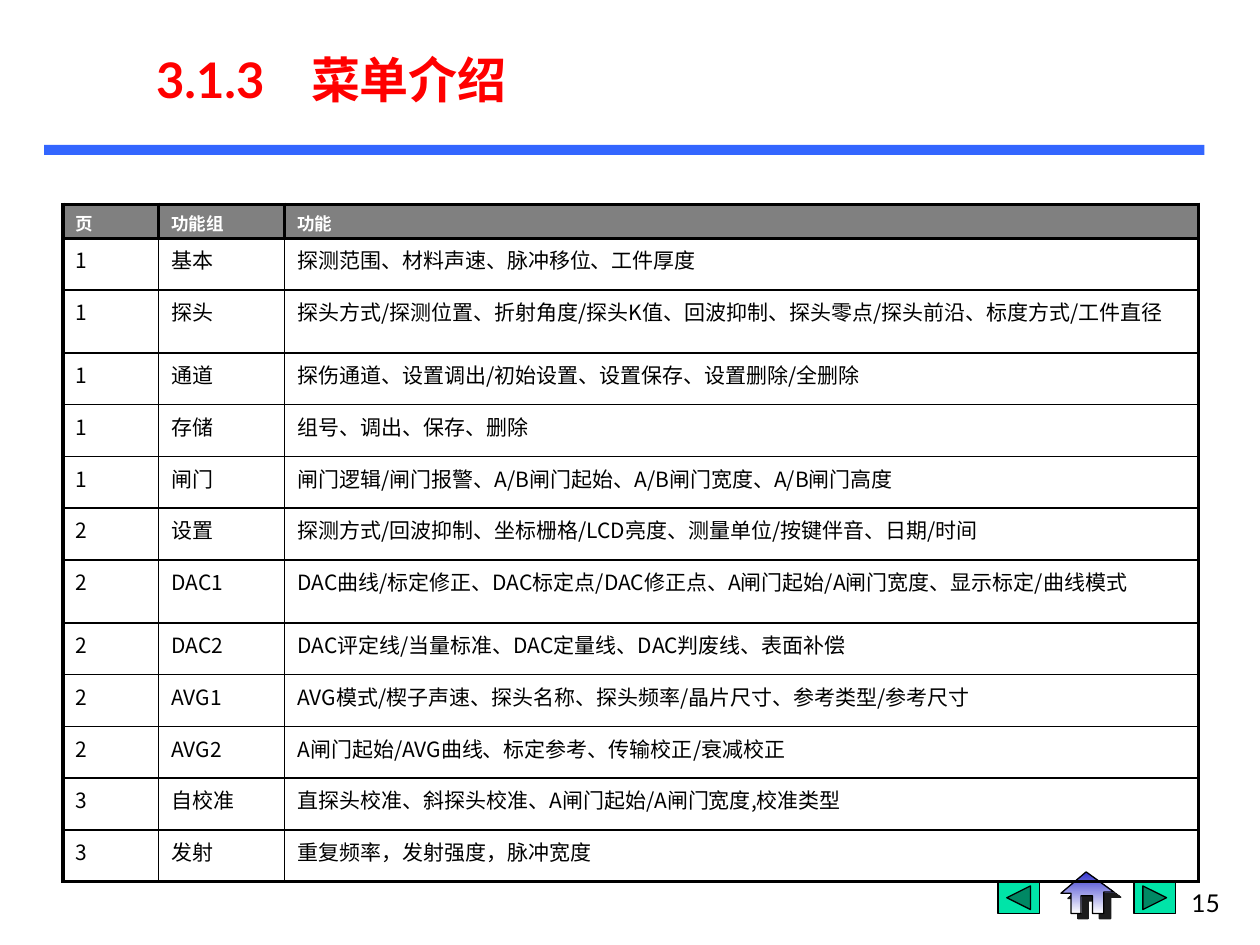
from lxml.etree import SubElement
from pptx import Presentation
from pptx.dml.color import RGBColor
from pptx.enum.shapes import MSO_SHAPE
from pptx.enum.text import MSO_ANCHOR, MSO_AUTO_SIZE, PP_ALIGN
from pptx.oxml.ns import qn
from pptx.util import Inches, Pt

COLORS = {
    "black": "000000", "white": "FFFFFF", "title": "FF0000", "rule": "3366FF",
    "header": "808080", "button": "00E4A8", "roof": "3333CC", "shadow": "1C1C1C",
}
LATIN, CJK = "Lato", "Noto Sans CJK SC"

HEADER = ("页", "功能组", "功能")
MENU = [
    ("1", "基本", "探测范围、材料声速、脉冲移位、工件厚度"),
    ("1", "探头", "探头方式/探测位置、折射角度/探头K值、回波抑制、探头零点/探头前沿、标度方式/工件直径"),
    ("1", "通道", "探伤通道、设置调出/初始设置、设置保存、设置删除/全删除"),
    ("1", "存储", "组号、调出、保存、删除"),
    ("1", "闸门", "闸门逻辑/闸门报警、A/B闸门起始、A/B闸门宽度、A/B闸门高度"),
    ("2", "设置", "探测方式/回波抑制、坐标栅格/LCD亮度、测量单位/按键伴音、日期/时间"),
    ("2", "DAC1", "DAC曲线/标定修正、DAC标定点/DAC修正点、A闸门起始/A闸门宽度、显示标定/曲线模式"),
    ("2", "DAC2", "DAC评定线/当量标准、DAC定量线、DAC判废线、表面补偿"),
    ("2", "AVG1", "AVG模式/楔子声速、探头名称、探头频率/晶片尺寸、参考类型/参考尺寸"),
    ("2", "AVG2", "A闸门起始/AVG曲线、标定参考、传输校正/衰减校正"),
    ("3", "自校准", "直探头校准、斜探头校准、A闸门起始/A闸门宽度,校准类型"),
    ("3", "发射", "重复频率，发射强度，脉冲宽度"),
]


def rgb(name):
    return RGBColor.from_string(COLORS[name])


def add_text(p, text, size=12, color="black", bold=False, font=CJK):
    r = p.add_run()
    r.text = text
    r.font.size, r.font.bold, r.font.name = Pt(size), bold, font
    r.font.color.rgb = rgb(color)
    SubElement(r.font._element, qn("a:ea")).set("typeface", CJK)


def add_box(s, left, top, width, height):
    tf = s.shapes.add_textbox(*map(Inches, (left, top, width, height))).text_frame
    tf.word_wrap = True
    return tf


def add_title(s, left, top, width, height):
    tf = add_box(s, left, top, width, height)
    tf.auto_size = MSO_AUTO_SIZE.SHAPE_TO_FIT_TEXT
    p = tf.paragraphs[0]
    # A tab stop sets the gap between number and heading
    tabs = SubElement(p._p.get_or_add_pPr(), qn("a:tabLst"))
    tab = SubElement(tabs, qn("a:tab"))
    tab.set("pos", str(Inches(1.23)))
    tab.set("algn", "l")
    add_text(p, "3.1.3\t", size=28, color="title", bold=True, font=LATIN)
    add_text(p, "菜单介绍", size=28, color="title", bold=True)


def add_preset(s, kind, left, top, width, height, fill, outlined=False):
    sp = s.shapes.add_shape(kind, *map(Inches, (left, top, width, height)))
    sp.shadow.inherit = False
    sp.fill.solid()
    sp.fill.fore_color.rgb = rgb(fill)
    if outlined:
        sp.line.color.rgb = rgb("black")
        sp.line.width = Pt(0.75)
    else:
        sp.line.fill.background()


def add_home(s, left, top):
    outline = [(0.2, 0), (0, 0.17), (0.08, 0.17), (0.08, 0.33), (0.16, 0.33), (0.16, 0.19),
               (0.25, 0.19), (0.25, 0.33), (0.34, 0.33), (0.34, 0.16), (0.42, 0.16)]
    points = [(Inches(left + x), Inches(top + y)) for x, y in outline]
    fb = s.shapes.build_freeform(*points[0])
    fb.add_line_segments(points[1:], close=True)
    sp = fb.convert_to_shape()
    sp.fill.gradient()
    sp.fill.gradient_angle = 270
    for stop, color, position in zip(sp.fill.gradient_stops, ("roof", "white"), (0, 1)):
        stop.color.rgb = rgb(color)
        stop.position = position
    sp.line.color.rgb = rgb("black")
    sp.line.width = Pt(0.75)
    # Hard shadow to the lower right
    sp.shadow.inherit = False
    effects = sp._element.spPr.find(qn("a:effectLst"))
    shadow = SubElement(effects, qn("a:outerShdw"))
    for key, value in (("blurRad", 0), ("dist", Pt(5)), ("dir", 37 * 60000), ("algn", "ctr")):
        shadow.set(key, str(value))
    SubElement(shadow, qn("a:srgbClr")).set("val", COLORS["shadow"])


def add_navigation(s, left, top, width, height):
    button_w, button_h = 0.33, 0.25
    y = top + height - button_h
    for kind, x in ((MSO_SHAPE.ACTION_BUTTON_BACK_OR_PREVIOUS, left),
                    (MSO_SHAPE.ACTION_BUTTON_FORWARD_OR_NEXT, left + width - button_w)):
        add_preset(s, kind, x, y, button_w, button_h, "button", outlined=True)
    add_home(s, left + 0.5, top)


def set_borders(cell, widths):
    tcPr = cell._tc.get_or_add_tcPr()
    for i, (side, width) in enumerate(zip("LRTB", widths)):
        ln = tcPr.makeelement(qn(f"a:ln{side}"), {"w": str(Pt(width))})
        fill = SubElement(ln, qn("a:solidFill"))
        SubElement(fill, qn("a:srgbClr")).set("val", COLORS["black"])
        tcPr.insert(i, ln)


def add_menu_table(s, left, top, width, height):
    rows = [HEADER] + MENU
    col_widths = (0.76, 1, width - 1.76)
    header_h = 0.27
    row_h = (height - header_h) / len(MENU)
    table = s.shapes.add_table(len(rows), len(HEADER),
                               *map(Inches, (left, top, width, height))).table
    table.horz_banding = False
    for col, w in zip(table.columns, col_widths):
        col.width = Inches(w)
    for i, values in enumerate(rows):
        head = i == 0
        table.rows[i].height = Inches(header_h if head else row_h)
        for j, value in enumerate(values):
            cell = table.cell(i, j)
            if head:
                cell.fill.solid()
                cell.fill.fore_color.rgb = rgb("header")
            else:
                cell.fill.background()
            # Thick frame and header, thin inner lines
            set_borders(cell, (2 if head or j == 0 else 0.75,
                               2 if head or j == len(HEADER) - 1 else 0.75,
                               2 if i <= 1 else 1,
                               2 if head or i == len(MENU) else 1))
            p = cell.text_frame.paragraphs[0]
            pPr = p._p.get_or_add_pPr()
            pPr.set("marL", str(Inches(0.38)))
            pPr.set("indent", str(-Inches(0.38)))
            add_text(p, value, size=10 if head else 12,
                     color="white" if head else "black", bold=head)


def add_page_number(s, left, top, width, height):
    tf = add_box(s, left, top, width, height)
    tf.vertical_anchor = MSO_ANCHOR.BOTTOM
    p = tf.paragraphs[0]
    p.alignment = PP_ALIGN.RIGHT
    add_text(p, "15", size=14, font=LATIN)


def main():
    prs = Presentation()
    prs.slide_width, prs.slide_height = Inches(10), Inches(7.5)
    s = prs.slides.add_slide(prs.slide_layouts[6])
    add_preset(s, MSO_SHAPE.RECTANGLE, 0.35, 1.15, 9.21, 0.08, "rule")
    add_navigation(s, 7.92, 6.92, 1.41, 0.33)
    add_page_number(s, 7.7, 6.83, 2.08, 0.5)
    add_title(s, 1.14, 0.34, 3.31, 0.57)
    add_menu_table(s, 0.5, 1.62, 9.01, 5.2)
    prs.save("out.pptx")


if __name__ == "__main__":
    main()
